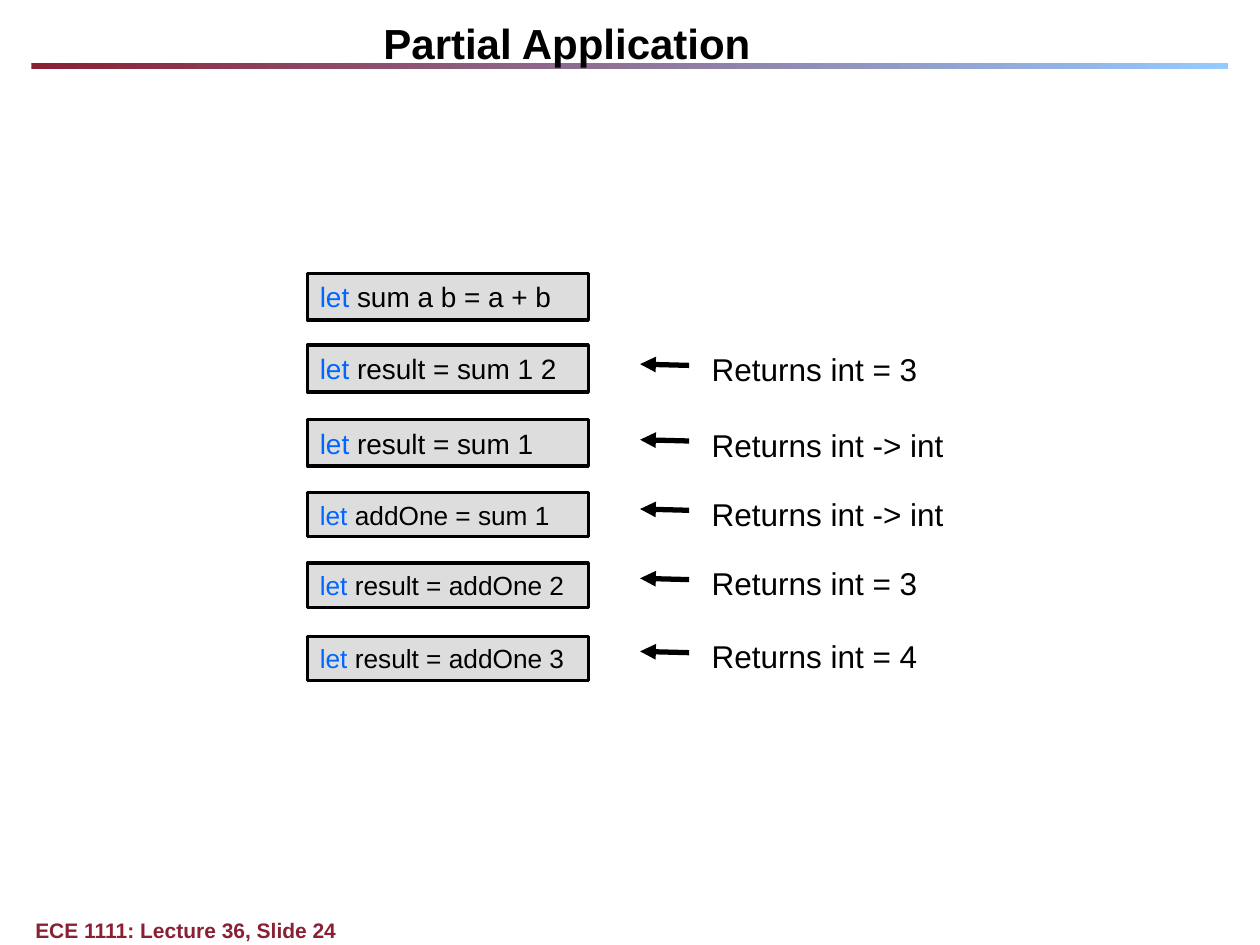
from dataclasses import dataclass
from typing import Optional

from lxml.etree import SubElement
from pptx import Presentation
from pptx.dml.color import RGBColor
from pptx.enum.shapes import MSO_CONNECTOR, MSO_SHAPE
from pptx.enum.text import MSO_ANCHOR, PP_ALIGN
from pptx.oxml.ns import qn
from pptx.util import Inches, Pt


@dataclass(frozen=True)
class Theme:
    font: str = "Arial"
    ink: RGBColor = RGBColor(0x00, 0x00, 0x00)
    keyword: RGBColor = RGBColor(0x00, 0x66, 0xFF)
    code_fill: RGBColor = RGBColor(0xDD, 0xDD, 0xDD)
    accent: RGBColor = RGBColor(0x89, 0x20, 0x34)
    accent_end: RGBColor = RGBColor(0x95, 0xCA, 0xFF)
    title_size: int = 24
    label_size: int = 18
    footer_size: int = 12


@dataclass(frozen=True)
class Step:
    """One line of code, and what it returns; label_top places label and arrow."""
    code: str
    top: float
    size: int = 16
    height: float = 0.37
    returns: Optional[str] = None
    label_top: float = 0.0


THEME = Theme()
KEYWORD = "let"
STEPS = (
    Step("sum a b = a + b", 2.17),
    Step("result = sum 1 2", 2.74, returns="Returns int = 3", label_top=2.73),
    Step("result = sum 1", 3.33, returns="Returns int -> int", label_top=3.33),
    Step("addOne = sum 1", 3.91, 15, 0.35, "Returns int -> int", 3.88),
    Step("result = addOne 2", 4.47, 15, 0.35, "Returns int = 3", 4.43),
    Step("result = addOne 3", 5.05, 15, 0.35, "Returns int = 4", 5.01),
)


def style(para, size: int, color: RGBColor, bold: bool = False) -> None:
    para.font.name = THEME.font
    para.font.size = Pt(size)
    para.font.color.rgb = color
    para.font.bold = bold


def add_header_bar(page) -> None:
    bar = page.shapes.add_shape(
        MSO_SHAPE.RECTANGLE, Inches(0.25), Inches(0.5), Inches(9.5), Inches(0.05))
    bar.shadow.inherit = False
    bar.line.fill.background()
    bar.fill.gradient()
    bar.fill.gradient_angle = 0
    for stop, color in zip(bar.fill.gradient_stops, (THEME.accent, THEME.accent_end)):
        stop.color.rgb = color


def add_footer(page, text: str):
    box = page.shapes.add_textbox(Inches(0.28), Inches(7.28), Inches(8.92), Inches(0.2))
    frame = box.text_frame
    frame.word_wrap = True
    frame.margin_left = frame.margin_right = frame.margin_top = frame.margin_bottom = 0
    frame.text = text
    style(frame.paragraphs[0], THEME.footer_size, THEME.accent, bold=True)
    return box


def format_title(title, text: str) -> None:
    title.left, title.top = Inches(0), Inches(0.06)
    title.width, title.height = Inches(9), Inches(0.4)
    frame = title.text_frame
    frame.vertical_anchor = MSO_ANCHOR.TOP
    frame.margin_top = Inches(0.08)
    frame.text = text
    para = frame.paragraphs[0]
    para.alignment = PP_ALIGN.CENTER
    style(para, THEME.title_size, THEME.ink, bold=True)


def add_code(page, step: Step) -> None:
    box = page.shapes.add_shape(
        MSO_SHAPE.RECTANGLE, Inches(2.44), Inches(step.top), Inches(2.23), Inches(step.height))
    box.shadow.inherit = False
    box.fill.solid()
    box.fill.fore_color.rgb = THEME.code_fill
    box.line.color.rgb = THEME.ink
    box.line.width = Pt(2)
    box.text_frame.vertical_anchor = MSO_ANCHOR.MIDDLE
    para = box.text_frame.paragraphs[0]
    para.alignment = PP_ALIGN.LEFT
    style(para, step.size, THEME.ink)
    for text, color in ((f"{KEYWORD} ", THEME.keyword), (step.code, THEME.ink)):
        span = para.add_run()
        span.text = text
        span.font.color.rgb = color


def add_arrow(page, label_top: float) -> None:
    arrow = page.shapes.add_connector(
        MSO_CONNECTOR.STRAIGHT,
        Inches(5.47), Inches(label_top + 0.17), Inches(5.08), Inches(label_top + 0.16))
    arrow.line.color.rgb = THEME.ink
    arrow.line.width = Pt(3)
    SubElement(arrow.line._get_or_add_ln(), qn("a:tailEnd"), type="triangle")
    SubElement(arrow.element.spPr, qn("a:effectLst"))


def add_label(page, text: str, top: float) -> None:
    width = 2.06 if "->" in text else 1.85
    box = page.shapes.add_textbox(Inches(5.55), Inches(top), Inches(width), Inches(0.4))
    box.text_frame.word_wrap = False
    box.text_frame.text = text
    style(box.text_frame.paragraphs[0], THEME.label_size, THEME.ink)


def main() -> None:
    deck = Presentation()
    deck.slide_width, deck.slide_height = Inches(10), Inches(7.5)
    page = deck.slides.add_slide(deck.slide_layouts[5])
    title = page.shapes.title
    format_title(title, "Partial Application")
    add_header_bar(page)
    footer = add_footer(page, "ECE 1111: Lecture 36, Slide 24")
    footer.element.addnext(title.element)  # the title lies over the bar
    for step in STEPS:
        add_code(page, step)
        if step.returns:
            add_arrow(page, step.label_top)
            add_label(page, step.returns, step.label_top)
    deck.save("out.pptx")


if __name__ == "__main__":
    main()
